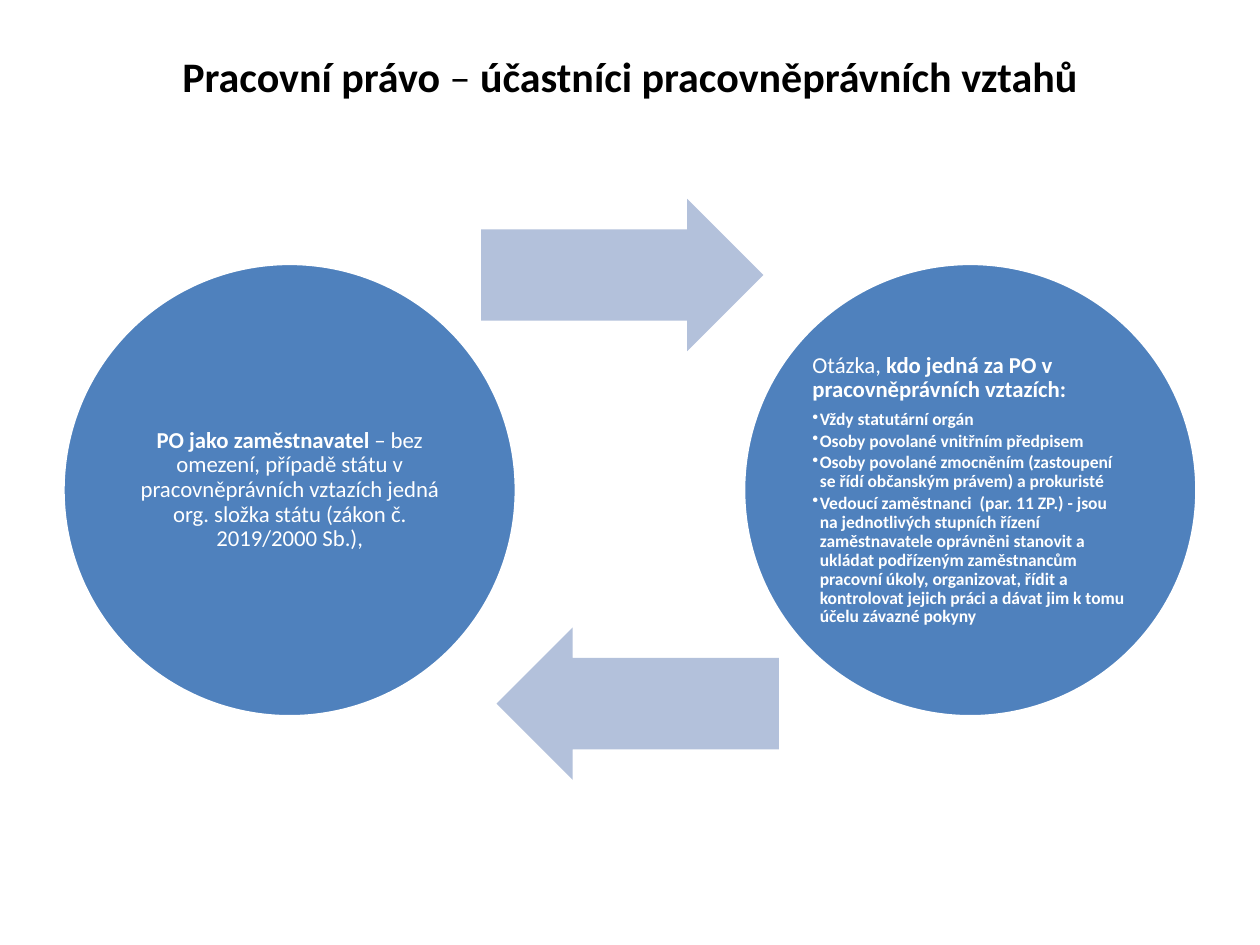
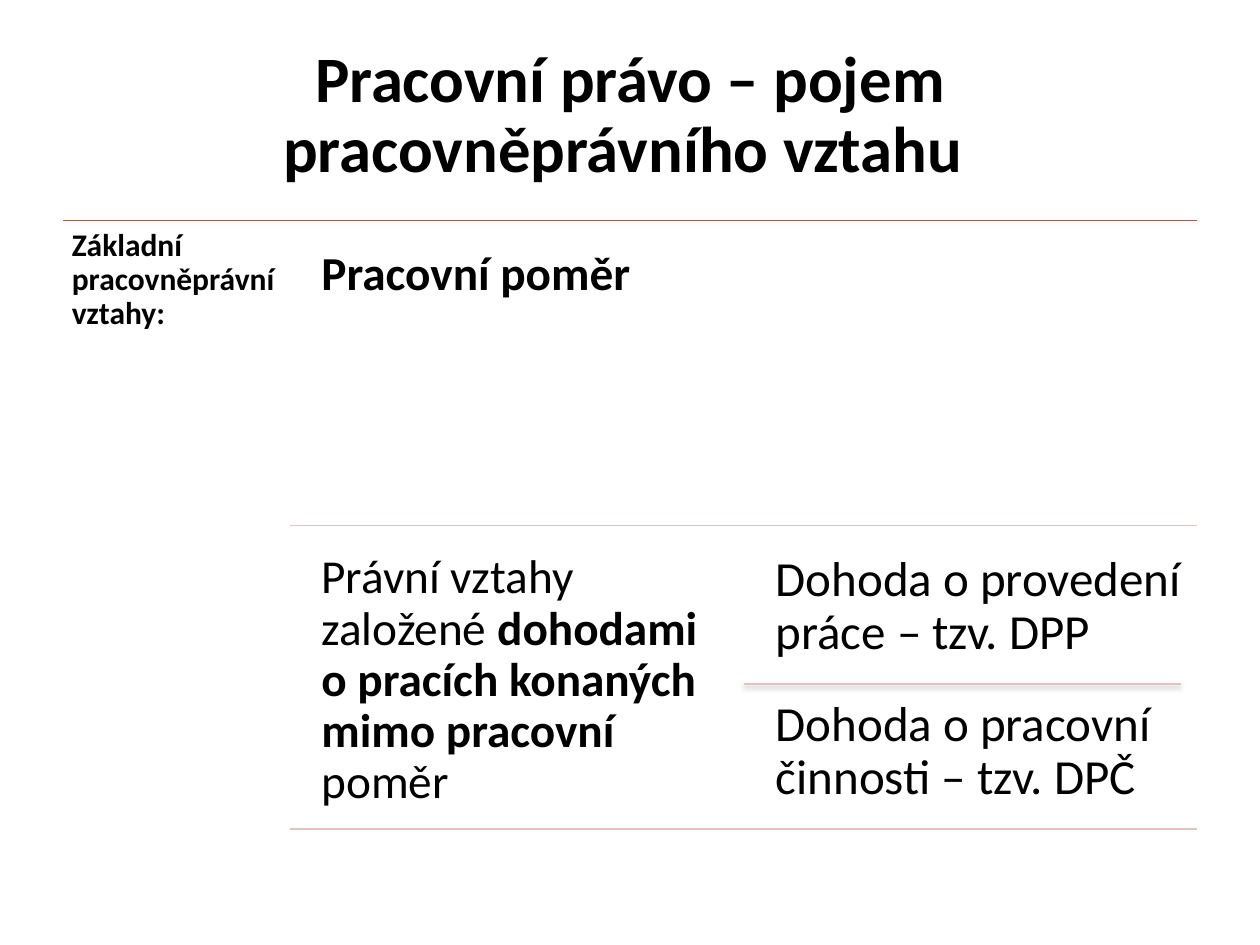
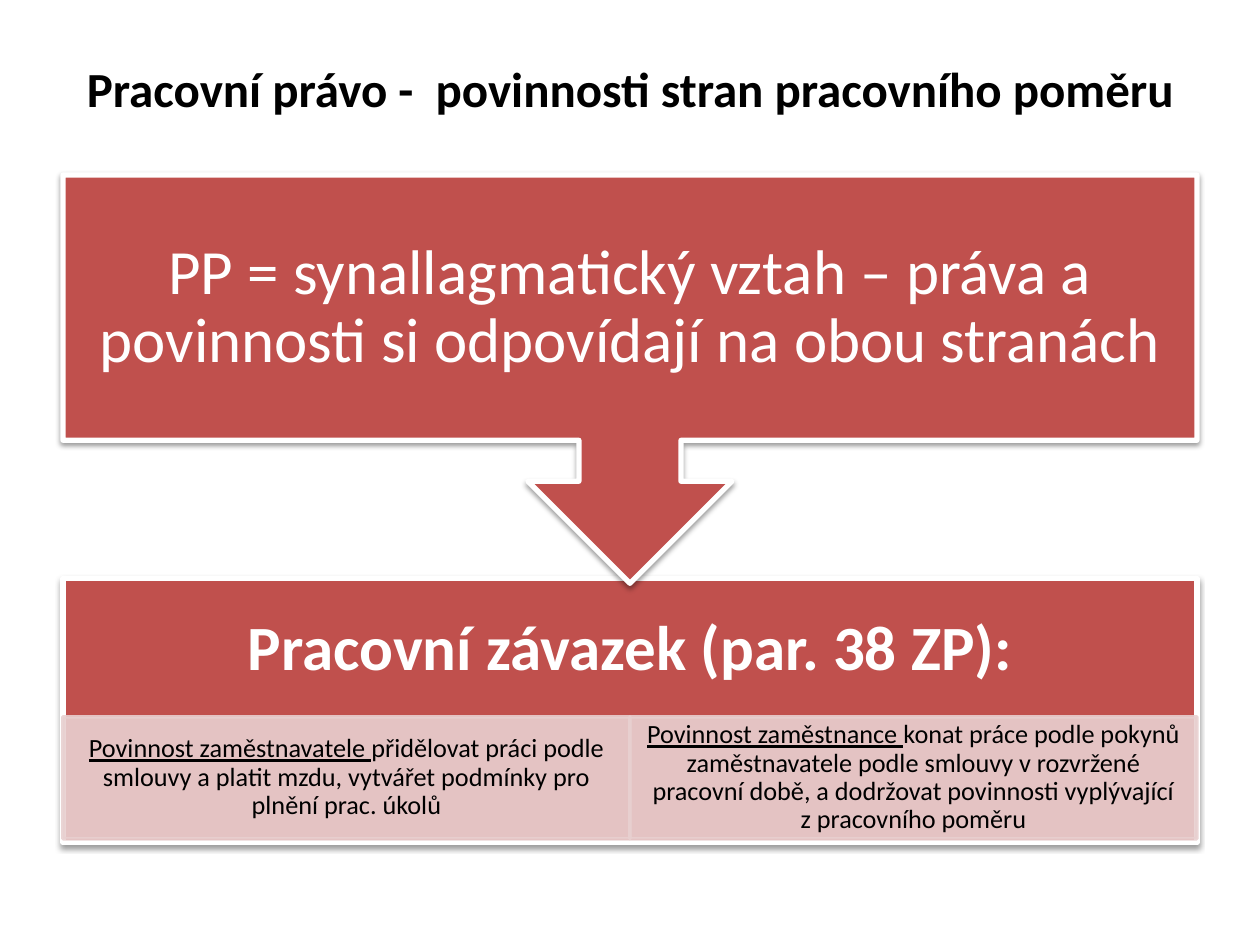
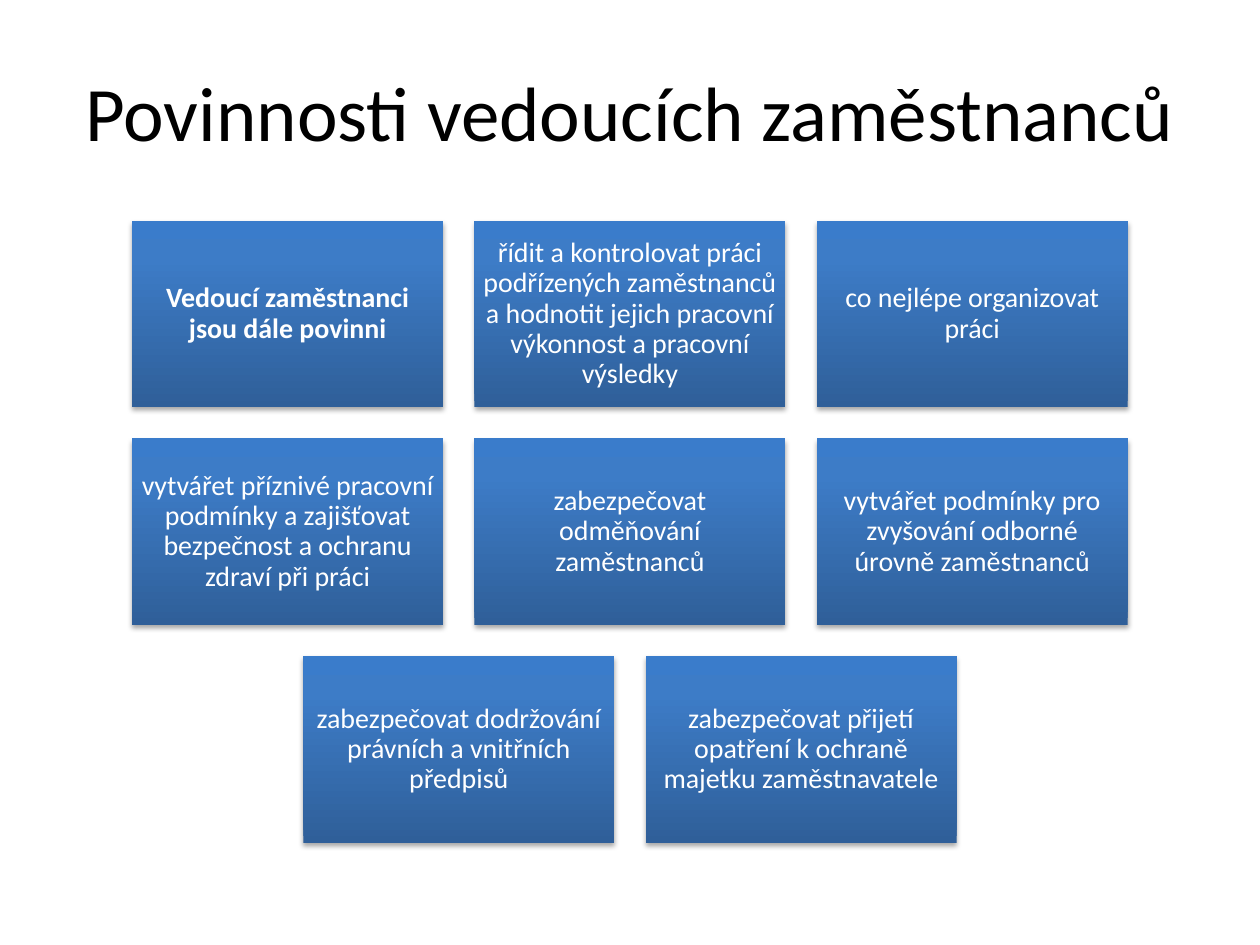
from copy import deepcopy
from dataclasses import dataclass

from lxml.etree import SubElement
from pptx import Presentation
from pptx.dml.color import RGBColor as RGB
from pptx.enum.shapes import MSO_CONNECTOR as LINK, MSO_SHAPE as KIND
from pptx.enum.text import MSO_ANCHOR as ANCHOR, MSO_AUTO_SIZE as FIT, PP_ALIGN as ALIGN
from pptx.oxml.ns import qn
from pptx.util import Cm, Pt


@dataclass(frozen=True)
class Theme:
    font: str = "Calibri"
    black: str = "000000"
    white: str = "FFFFFF"
    blue: str = "4F81BD"
    pale: str = "B3C1DB"
    red: str = "C0504D"
    rose: str = "E2C2C2"
    blush: str = "E8D0D0"
    grade: tuple = ((0, "2F5F99"), (0.8, "3D7CC7"), (1, "3A7CCB"))
    soft: tuple = (35, 1.8)  # shadow opacity in %, distance in points
    deep: tuple = (38, 1.6)
    tight: float = 0.9
    tiny: int = 10
    small: int = 13
    note: int = 15
    tile: int = 16
    label: int = 18
    body: int = 27
    item: int = 28
    big: int = 36


T = Theme()
WIDE, HIGH = 25.4, 19.05
EDGE = 1.27
SPAN = WIDE - 2 * EDGE


def write(par, text, size, color=T.black, align=ALIGN.CENTER, under=False, space=T.tight):
    """Fill a paragraph; parts between asterisks are bold, or underlined."""
    par.alignment = align
    par.line_spacing = space
    for num, part in enumerate(text.split("*")):
        if not part:
            continue
        run = par.add_run()
        run.text = part
        font = run.font
        font.name, font.size = T.font, Pt(size)
        font.color.rgb = RGB.from_string(color)
        mark = num % 2 == 1
        font.bold = mark and not under
        font.underline = mark and under


def frame(shape, pad, anchor=ANCHOR.MIDDLE):
    """Set wrapping, anchor and the (side, end) insets; return the frame."""
    box = shape.text_frame
    box.word_wrap = True
    box.auto_size = FIT.NONE
    box.vertical_anchor = anchor
    box.margin_left = box.margin_right = Cm(pad[0])
    box.margin_top = box.margin_bottom = Cm(pad[1])
    return box


def start(deck, text, size, high, space=T.tight):
    """Add a slide with a formatted title."""
    slide = deck.slides.add_slide(deck.slide_layouts[5])
    title = slide.shapes.title
    title.left, title.top = Cm(EDGE), Cm(0.76)
    title.width, title.height = Cm(SPAN), Cm(high)
    box = frame(title, (0.25, 0.13))
    write(box.paragraphs[0], text, size, space=space)
    return slide


def shade(item, look):
    alpha, dist = look
    props = item.element.spPr
    fx = props.find(qn("a:effectLst"))
    if fx is None:
        fx = SubElement(props, qn("a:effectLst"))
    drop = SubElement(fx, qn("a:outerShdw"), blurRad=str(Pt(3.1)), dist=str(Pt(dist)),
                      dir="5400000", rotWithShape="0")
    tint = SubElement(drop, qn("a:srgbClr"), val=T.black)
    SubElement(tint, qn("a:alpha"), val=str(alpha * 1000))


def shape(slide, kind, x, y, w, h, fill=None, edge=None, width=2, shadow=None):
    item = slide.shapes.add_shape(kind, Cm(x), Cm(y), Cm(w), Cm(h))
    item.shadow.inherit = False
    if fill:
        item.fill.solid()
        item.fill.fore_color.rgb = RGB.from_string(fill)
    if edge:
        item.line.color.rgb = RGB.from_string(edge)
        item.line.width = Pt(width)
    else:
        item.line.fill.background()
    if shadow:
        shade(item, shadow)
    return item


def fade(item):
    """Make the solid fill and line 90 % opaque."""
    for tint in item.element.spPr.iter(qn("a:srgbClr")):
        SubElement(tint, qn("a:alpha"), val="90000")


def blend(item):
    """Give the shape the theme's three-stop gradient, dark at the bottom."""
    item.fill.gradient()
    item.fill.gradient_angle = 90
    stops = item.element.spPr.find(qn("a:gradFill")).find(qn("a:gsLst"))
    stops.append(deepcopy(stops[-1]))
    for stop, (pos, color) in zip(item.fill.gradient_stops, T.grade):
        stop.position = pos
        stop.color.rgb = RGB.from_string(color)


def label(slide, text, x, y, w, h, size, pad, color=T.black, align=ALIGN.LEFT,
          anchor=ANCHOR.TOP):
    item = slide.shapes.add_textbox(Cm(x), Cm(y), Cm(w), Cm(h))
    box = frame(item, (pad, pad), anchor)
    write(box.paragraphs[0], text, size, color, align)


def rule(slide, x, end, y, color=T.rose, look=T.deep):
    line = slide.shapes.add_connector(LINK.STRAIGHT, Cm(x), Cm(y), Cm(end), Cm(y))
    line.line.color.rgb = RGB.from_string(color)
    line.line.width = Pt(0.75)
    shade(line, look)


def bullet(par, text):
    par.level = 1
    props = par._p.get_or_add_pPr()
    props.set("marL", str(Cm(0.15)))
    props.set("indent", str(Cm(-0.15)))
    SubElement(props, qn("a:buChar"), char="•")
    par.space_after = Pt(1.5)
    write(par, text, T.tiny, T.white, ALIGN.LEFT)


def parties(deck):
    slide = start(deck, "*Pracovní právo *– *účastníci pracovněprávních vztahů*", 24, 1.55, 1)
    size, top = 9.14, 5.31

    def disc(x):
        item = shape(slide, KIND.OVAL, x, top, size, size, T.blue, T.white)
        return frame(item, (0.05, 0.05))

    def arrow(kind, x, y):
        item = shape(slide, kind, x, y, 5.69, 3.07, T.pale)
        item.adjustments[0], item.adjustments[1] = 0.6, 0.5

    firm = disc(EDGE)
    write(firm.paragraphs[0],
          "*PO jako zaměstnavatel *– bez omezení, případě státu v pracovněprávních "
          "vztazích jedná org. složka státu (zákon č. 2019/2000 Sb.),", T.small, T.white)
    arrow(KIND.RIGHT_ARROW, 9.7, 4.01)
    agents = disc(WIDE - EDGE - size)
    head = agents.paragraphs[0]
    head.space_after = Pt(4.5)
    write(head, "Otázka, *kdo jedná za PO v pracovněprávních vztazích:*",
          T.small, T.white, ALIGN.LEFT)
    for text in (
        "Vždy statutární orgán",
        "Osoby povolané vnitřním předpisem",
        "Osoby povolané zmocněním (zastoupení se řídí občanským právem) a prokuristé",
        "Vedoucí zaměstnanci  (par. 11 ZP.) - jsou na jednotlivých stupních řízení "
        "zaměstnavatele oprávněni stanovit a ukládat podřízeným zaměstnancům pracovní "
        "úkoly, organizovat, řídit a kontrolovat jejich práci a dávat jim k tomu účelu "
        "závazné pokyny",
    ):
        bullet(agents.add_paragraph(), f"*{text}*")
    arrow(KIND.LEFT_ARROW, 10.01, 12.65)


def concept(deck):
    slide = start(deck, "*Pracovní právo – pojem pracovněprávního vztahu *", 37, 3.18)
    right = WIDE - EDGE
    top, mid, split, low = 4.45, 10.59, 13.79, 16.71
    near, far, wide = 6.2, 15.34, 8.79
    rule(slide, EDGE, right, top, T.red, T.soft)
    label(slide, "*Základní pracovněprávní vztahy:*", EDGE, top, 4.57, 12.57,
          T.label, 0.18, align=ALIGN.JUSTIFY)
    label(slide, "*Pracovní poměr*", near, 4.75, wide, 5.84, T.body, 0.28)
    rule(slide, 5.84, right, mid)
    label(slide, "Právní vztahy založené *dohodami o pracích konaných mimo pracovní *poměr",
          near, 10.87, wide, 5.84, T.body, 0.28)
    label(slide, "Dohoda o provedení práce – tzv. DPP", far, 10.87, wide, 2.92, T.item, 0.3)
    rule(slide, 14.99, 23.8, split)
    label(slide, "Dohoda o pracovní činnosti – tzv. DPČ", far, split, wide, 2.92, T.item, 0.3)
    rule(slide, 5.84, right, low)


def duties(deck):
    slide = start(deck, "*Pracovní právo -  povinnosti stran pracovního poměru*", 28, 2.16)
    top = 11.66
    shape(slide, KIND.RECTANGLE, EDGE, top, SPAN, 5.33, T.red, T.white, 3, T.deep)
    label(slide, "*Pracovní závazek (par. 38 ZP):*", EDGE, top, SPAN, 2.9, T.big, 0.71,
          T.white, ALIGN.CENTER, ANCHOR.MIDDLE)
    half = SPAN / 2
    sides = (
        "*Povinnost zaměstnavatele *přidělovat práci podle smlouvy a platit mzdu, "
        "vytvářet podmínky pro plnění prac. úkolů",
        "*Povinnost zaměstnance *konat práce podle pokynů zaměstnavatele podle smlouvy "
        "v rozvržené pracovní době, a dodržovat povinnosti vyplývající "
        "z\u00a0pracovního poměru".replace("\u00a0", " "),
    )
    for col, text in enumerate(sides):
        cell = shape(slide, KIND.RECTANGLE, EDGE + col * half, 14.45, half, 2.46,
                     T.blush, T.blush)
        fade(cell)
        write(frame(cell, (0.3, 0.05)).paragraphs[0], text, T.note, under=True)
    call = shape(slide, KIND.DOWN_ARROW_CALLOUT, EDGE, 3.53, SPAN, 8.23,
                 T.red, T.white, 3, T.deep)
    write(frame(call, (0.71, 0.71)).paragraphs[0],
          "PP = synallagmatický vztah – práva a povinnosti si odpovídají na obou stranách",
          T.big, T.white)


def leaders(deck):
    slide = start(deck, "Povinnosti vedoucích zaměstnanců", 44, 3.18)
    wide, high, gap = 6.27, 3.76, 0.63
    rows = (
        ("*Vedoucí zaměstnanci jsou dále povinni*",
         "řídit a kontrolovat práci podřízených zaměstnanců a hodnotit jejich pracovní "
         "výkonnost a pracovní výsledky",
         "co nejlépe organizovat práci"),
        ("vytvářet příznivé pracovní podmínky a zajišťovat bezpečnost a ochranu zdraví "
         "při práci",
         "zabezpečovat odměňování zaměstnanců",
         "vytvářet podmínky pro zvyšování odborné úrovně zaměstnanců"),
        ("zabezpečovat dodržování právních a vnitřních předpisů",
         "zabezpečovat přijetí opatření k ochraně majetku zaměstnavatele"),
    )
    for row, texts in enumerate(rows):
        count = len(texts)
        left = (WIDE - count * wide - (count - 1) * gap) / 2
        for col, text in enumerate(texts):
            tile = shape(slide, KIND.RECTANGLE, left + col * (wide + gap),
                         4.45 + row * (high + gap), wide, high, shadow=T.soft)
            blend(tile)
            write(frame(tile, (0.18, 0.18)).paragraphs[0], text, T.tile, T.white)


def main():
    deck = Presentation()
    deck.slide_width, deck.slide_height = Cm(WIDE), Cm(HIGH)
    for build in (parties, concept, duties, leaders):
        build(deck)
    deck.save("out.pptx")


if __name__ == "__main__":
    main()
